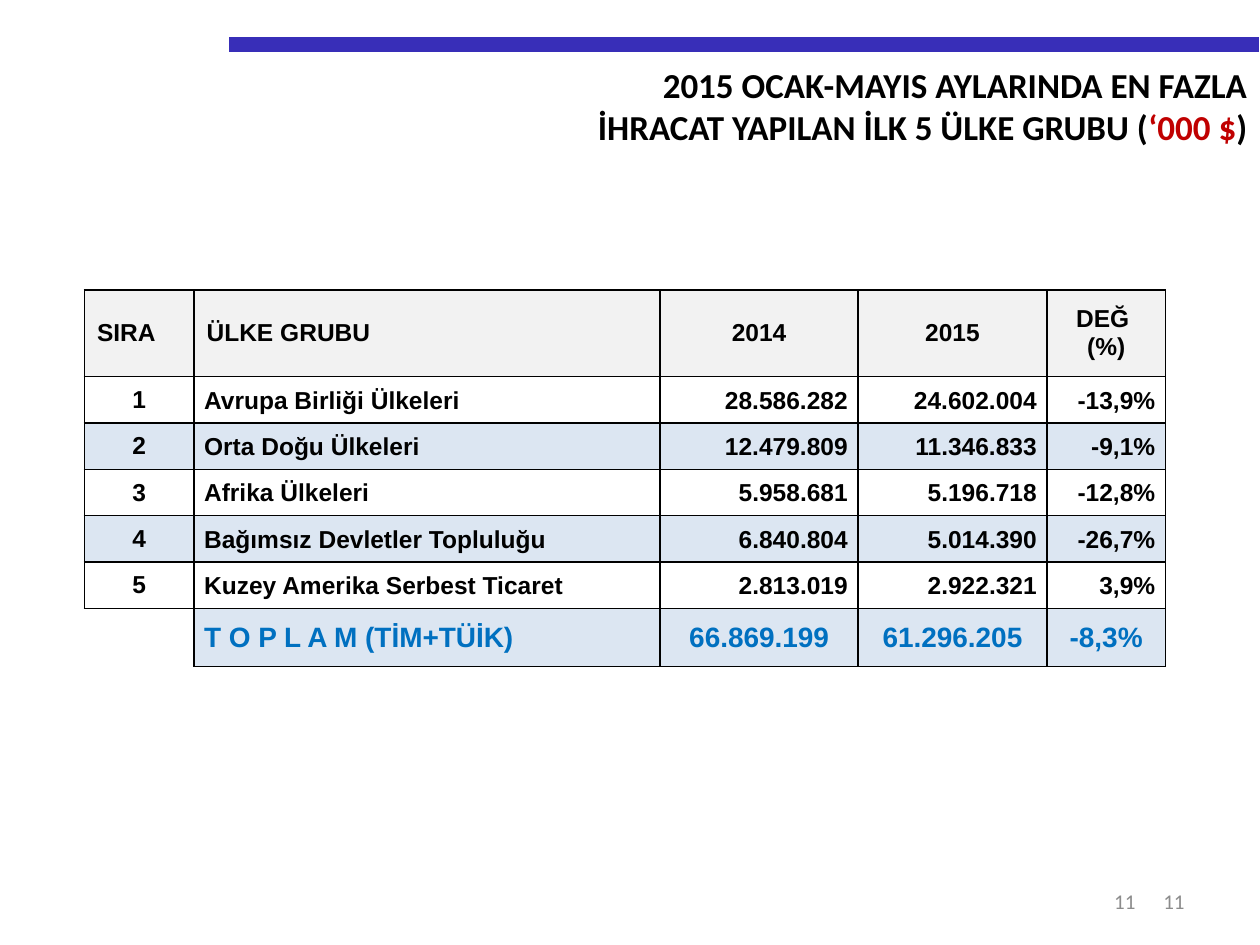
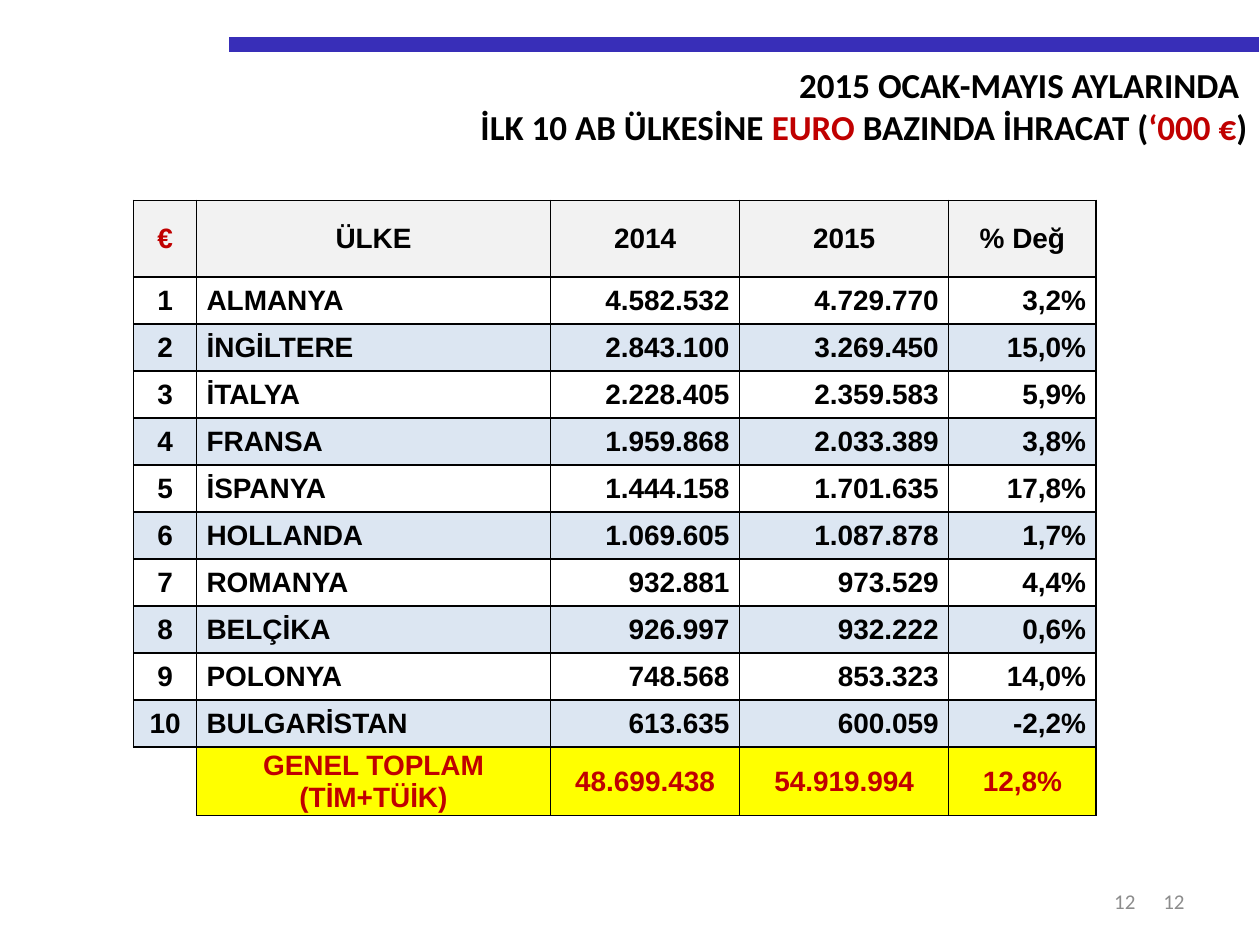
from pptx import Presentation
from pptx.dml.color import RGBColor
from pptx.enum.shapes import MSO_CONNECTOR
from pptx.enum.text import MSO_ANCHOR, MSO_AUTO_SIZE, PP_ALIGN
from pptx.oxml import parse_xml
from pptx.oxml.ns import nsdecls
from pptx.util import Inches, Pt
from lxml import etree

BLACK = RGBColor(0x00, 0x00, 0x00)
RED = RGBColor(0xC0, 0x00, 0x00)
BLUE = RGBColor(0x00, 0x70, 0xC0)
BAND_BLUE = RGBColor(0x38, 0x2E, 0xB8)
NUMBER_GRAY = RGBColor(0x8C, 0x8C, 0x8C)
HEADER_GRAY = RGBColor(0xF2, 0xF2, 0xF2)
STRIPE_BLUE = RGBColor(0xDC, 0xE6, 0xF2)
YELLOW = RGBColor(0xFF, 0xFF, 0x00)

LEFT, CENTER, RIGHT = PP_ALIGN.LEFT, PP_ALIGN.CENTER, PP_ALIGN.RIGHT
WIDE_MARGINS = (0.1, 0.05, 0.1, 0.05)
LABEL_MARGINS = (0.08, 0.01, 0.01, 0)
VALUE_MARGINS = (0.01, 0.01, 0.08, 0)
TOTAL_MARGINS = (0.01, 0.01, 0.01, 0)

TITLE_BOX = (1.06, 0.45, 8.94, 0.77)
NUMBER_BOXES = [(7.17, 6.95, 2.33, 0.4), (7.01, 6.95, 2.1, 0.4)]


def write_text(frame, text, font="Arial", size=14, color=BLACK, bold=True, align=LEFT):
    """Write one paragraph per line; pieces between bars are red."""
    for index, line in enumerate(text.split("\n")):
        paragraph = frame.add_paragraph() if index else frame.paragraphs[0]
        paragraph.alignment = align
        for piece_index, piece in enumerate(line.split("|")):
            if not piece:
                continue
            run = paragraph.add_run()
            run.text = piece
            run.font.name = font
            run.font.size = Pt(size)
            run.font.bold = bold
            run.font.color.rgb = RED if piece_index % 2 else color


def add_band(slide):
    band = slide.shapes.add_connector(
        MSO_CONNECTOR.STRAIGHT, Inches(1.82), Inches(0.35), Inches(9.99), Inches(0.35))
    band.line.color.rgb = BAND_BLUE
    band.line.width = Pt(8.5)
    band._element.spPr.append(parse_xml(f"<a:effectLst {nsdecls('a')}/>"))


def add_page_number(slide, box, number):
    shape = slide.shapes.add_textbox(*map(Inches, box))
    frame = shape.text_frame
    frame.word_wrap = True
    frame.vertical_anchor = MSO_ANCHOR.MIDDLE
    write_text(frame, str(number), font="Calibri", size=12, color=NUMBER_GRAY,
               bold=False, align=RIGHT)


def place_title(slide, box, text):
    title = slide.shapes.title
    title.left, title.top, title.width, title.height = map(Inches, box)
    frame = title.text_frame
    frame.word_wrap = True
    frame.auto_size = MSO_AUTO_SIZE.NONE
    frame.vertical_anchor = MSO_ANCHOR.TOP
    write_text(frame, text, font="Calibri", size=20, align=RIGHT)


def add_slide(presentation, title, number):
    slide = presentation.slides.add_slide(presentation.slide_layouts[5])
    add_band(slide)
    for box in NUMBER_BOXES:
        add_page_number(slide, box, number)
    place_title(slide, TITLE_BOX, title)
    return slide


def set_borders(cell, sides):
    """Draw the given sides of a cell and hide the others."""
    properties = cell._tc.get_or_add_tcPr()
    for side in "LRTB":
        fill = (f'<a:solidFill><a:srgbClr val="{BLACK}"/></a:solidFill>'
                if side in sides else "<a:noFill/>")
        properties.append(etree.fromstring(
            f'<a:ln{side} {nsdecls("a")} w="{Pt(1)}">{fill}</a:ln{side}>'))


def format_cell(cell, text, fill=None, margins=WIDE_MARGINS, sides="LRTB", **text_format):
    set_borders(cell, sides)
    if fill is None:
        cell.fill.background()
    else:
        cell.fill.solid()
        cell.fill.fore_color.rgb = fill
    cell.vertical_anchor = MSO_ANCHOR.MIDDLE
    cell.margin_left, cell.margin_top, cell.margin_right, cell.margin_bottom = map(
        Inches, margins)
    write_text(cell.text_frame, text, **text_format)


def add_ranking_table(slide, box, widths, headers, countries, totals, header_height,
                      total_height, size, header_aligns, total_fill, total_color,
                      total_label):
    """Add a ranked export table; total_label holds margins and alignment."""
    row_count = len(countries) + 2
    table = slide.shapes.add_table(row_count, len(widths), *map(Inches, box)).table
    table.first_row = table.horz_banding = False
    for column, width in zip(table.columns, widths):
        column.width = Inches(width)
    body_height = (box[3] - header_height - total_height) / len(countries)
    heights = [header_height] + [body_height] * len(countries) + [total_height]
    for row, height in zip(table.rows, heights):
        row.height = Inches(height)

    for column, (header, align) in enumerate(zip(headers, header_aligns)):
        format_cell(table.cell(0, column), header, HEADER_GRAY, size=size, align=align)

    for rank, (country, *values) in enumerate(countries, 1):
        fill = None if rank % 2 else STRIPE_BLUE
        format_cell(table.cell(rank, 0), str(rank), fill, size=size, align=CENTER)
        format_cell(table.cell(rank, 1), country, fill, LABEL_MARGINS, size=size)
        for column, value in enumerate(values, 2):
            format_cell(table.cell(rank, column), value, fill, VALUE_MARGINS,
                        size=size, align=RIGHT)

    last_row = row_count - 1
    format_cell(table.cell(last_row, 0), "", sides="TR")
    label_margins, label_align = total_label
    for column, total in enumerate(totals, 1):
        is_label = column == 1
        format_cell(table.cell(last_row, column), total, total_fill,
                    label_margins if is_label else TOTAL_MARGINS, size=16,
                    color=total_color, align=label_align if is_label else CENTER)


def add_country_groups(presentation):
    slide = add_slide(
        presentation,
        "2015 OCAK-MAYIS AYLARINDA EN FAZLA\n"
        "İHRACAT YAPILAN İLK 5 ÜLKE GRUBU (|‘000 $|)", 11)
    add_ranking_table(
        slide, (0.67, 2.3, 8.58, 2.99), [0.87, 3.7, 1.57, 1.5, 0.94],
        ["SIRA", "ÜLKE GRUBU", "2014", "2015", "DEĞ \n(%)"],
        [
            ("Avrupa Birliği Ülkeleri", "28.586.282", "24.602.004", "-13,9%"),
            ("Orta Doğu Ülkeleri", "12.479.809", "11.346.833", "-9,1%"),
            ("Afrika Ülkeleri", "5.958.681", "5.196.718", "-12,8%"),
            ("Bağımsız Devletler Topluluğu", "6.840.804", "5.014.390", "-26,7%"),
            ("Kuzey Amerika Serbest Ticaret", "2.813.019", "2.922.321", "3,9%"),
        ],
        ["T O P L A M (TİM+TÜİK)", "66.869.199", "61.296.205", "-8,3%"],
        header_height=0.69, total_height=0.46, size=14,
        header_aligns=[LEFT] * 2 + [CENTER] * 3, total_fill=STRIPE_BLUE,
        total_color=BLUE, total_label=(LABEL_MARGINS, LEFT))


def add_euro_countries(presentation):
    slide = add_slide(
        presentation,
        "2015 OCAK-MAYIS AYLARINDA \n"
        "İLK 10 AB ÜLKESİNE |EURO| BAZINDA İHRACAT (|‘000 €|)", 12)
    add_ranking_table(
        slide, (1.06, 1.59, 7.64, 4.87), [0.5, 2.81, 1.5, 1.66, 1.17],
        ["|€|", "ÜLKE", "2014", "2015", "% Değ"],
        [
            ("ALMANYA", "4.582.532", "4.729.770", "3,2%"),
            ("İNGİLTERE", "2.843.100", "3.269.450", "15,0%"),
            ("İTALYA", "2.228.405", "2.359.583", "5,9%"),
            ("FRANSA", "1.959.868", "2.033.389", "3,8%"),
            ("İSPANYA", "1.444.158", "1.701.635", "17,8%"),
            ("HOLLANDA", "1.069.605", "1.087.878", "1,7%"),
            ("ROMANYA", "932.881", "973.529", "4,4%"),
            ("BELÇİKA", "926.997", "932.222", "0,6%"),
            ("POLONYA", "748.568", "853.323", "14,0%"),
            ("BULGARİSTAN", "613.635", "600.059", "-2,2%"),
        ],
        ["GENEL TOPLAM (TİM+TÜİK)", "48.699.438", "54.919.994", "12,8%"],
        header_height=0.61, total_height=0.53, size=16,
        header_aligns=[CENTER] * 5, total_fill=YELLOW,
        total_color=RED, total_label=(TOTAL_MARGINS, CENTER))


def main():
    presentation = Presentation()
    presentation.slide_width = Inches(10)
    presentation.slide_height = Inches(7.5)
    add_country_groups(presentation)
    add_euro_countries(presentation)
    presentation.save("out.pptx")


if __name__ == "__main__":
    main()
